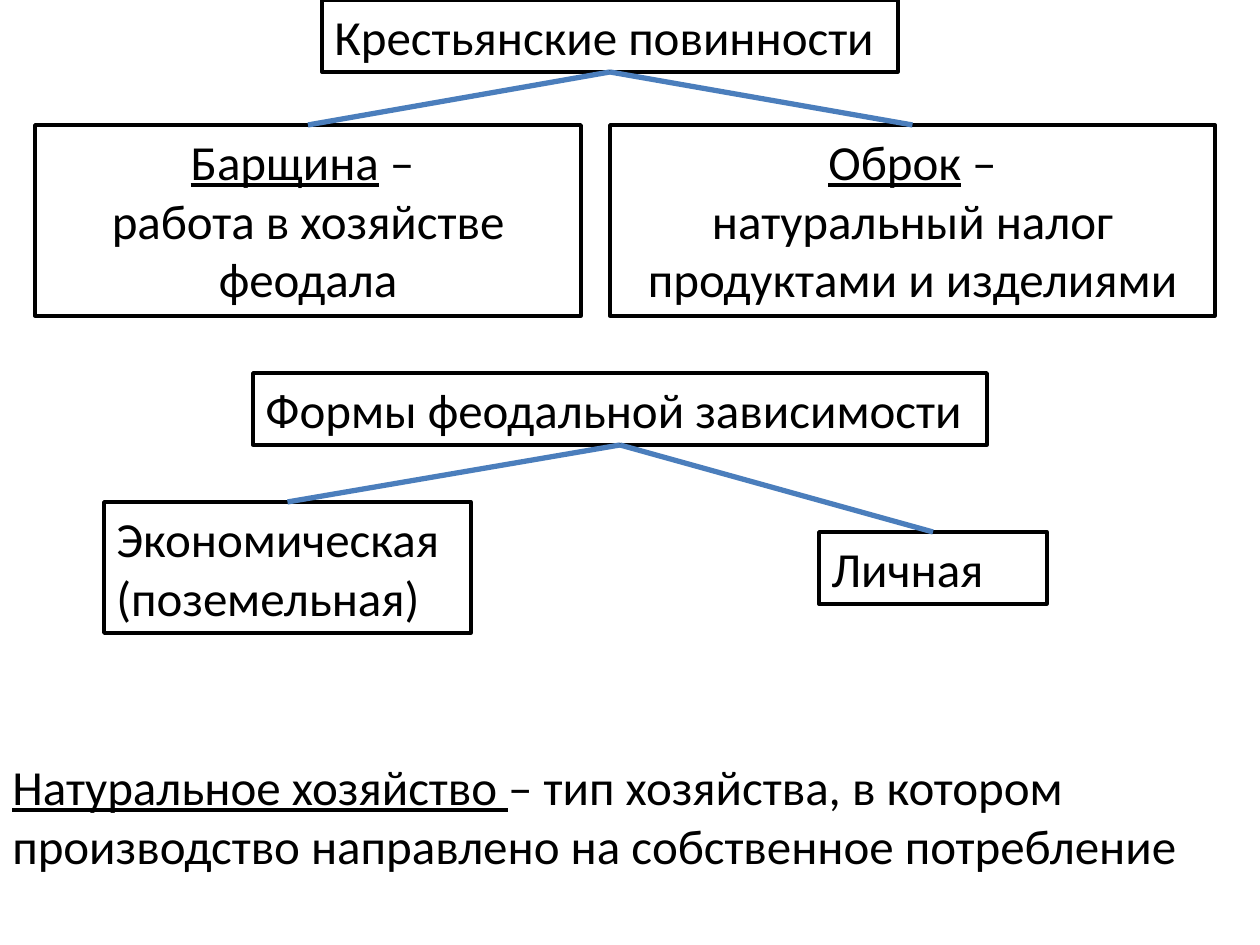
from lxml.etree import SubElement
from pptx import Presentation
from pptx.dml.color import RGBColor
from pptx.enum.shapes import MSO_CONNECTOR, MSO_SHAPE
from pptx.enum.text import MSO_ANCHOR, PP_ALIGN
from pptx.oxml.ns import qn
from pptx.util import Inches, Pt

BLACK = RGBColor(0x00, 0x00, 0x00)
WHITE = RGBColor(0xFF, 0xFF, 0xFF)
BLUE = RGBColor(0x4B, 0x7E, 0xBC)
LEFT, CENTER = PP_ALIGN.LEFT, PP_ALIGN.CENTER
TOP_SITE, BOTTOM_SITE = 0, 2

# Box: (left, top, width, height) in px, alignment, paragraphs of (text, underlined) runs
TREES = [
    {
        "root": ((322, 0, 576, 72), LEFT, [[("Крестьянские повинности", False)]]),
        "branches": [
            ((35, 125, 546, 191), CENTER,
             [[("Барщина", True), (" – ", False)],
              [("работа в хозяйстве феодала", False)]]),
            ((610, 125, 605, 191), CENTER,
             [[("Оброк", True), (" –", False)],
              [("натуральный налог продуктами и изделиями", False)]]),
        ],
    },
    {
        "root": ((253, 373, 734, 72), LEFT, [[("Формы феодальной зависимости", False)]]),
        "branches": [
            ((104, 502, 367, 131), LEFT, [[("Экономическая (поземельная)", False)]]),
            ((819, 532, 228, 72), LEFT, [[("Личная", False)]]),
        ],
    },
]
DEFINITION = ((0, 750, 1260, 131), LEFT, [[
    ("Натуральное хозяйство ", True),
    ("– тип хозяйства, в котором производство направлено на собственное потребление", False),
]])


def px(value):
    return round(value * Inches(1) / 126)


def write(shape, align, paragraphs):
    frame = shape.text_frame
    frame.word_wrap = True
    frame.vertical_anchor = MSO_ANCHOR.TOP
    for index, runs in enumerate(paragraphs):
        paragraph = frame.add_paragraph() if index else frame.paragraphs[0]
        paragraph.alignment = align
        paragraph.font.name = "Calibri"
        paragraph.font.size = Pt(28)
        paragraph.font.color.rgb = BLACK
        for text, underlined in runs:
            run = paragraph.add_run()
            run.text = text
            if underlined:
                run.font.underline = True


def add_box(slide, place, align, paragraphs):
    box = slide.shapes.add_shape(MSO_SHAPE.RECTANGLE, *map(px, place))
    box.shadow.inherit = False
    box.fill.solid()
    box.fill.fore_color.rgb = WHITE
    box.line.color.rgb = BLACK
    box.line.width = Pt(2)
    write(box, align, paragraphs)
    return box


def add_branch_line(slide, root, branch):
    line = slide.shapes.add_connector(MSO_CONNECTOR.STRAIGHT, 0, 0, 0, 0)
    line.begin_connect(root, BOTTOM_SITE)
    line.end_connect(branch, TOP_SITE)
    line.line.color.rgb = BLUE
    line.line.width = Pt(3)
    SubElement(line._element.spPr, qn("a:effectLst"))


def main():
    deck = Presentation()
    deck.slide_width, deck.slide_height = Inches(10), Inches(7.5)
    slide = deck.slides.add_slide(deck.slide_layouts[6])
    for tree in TREES:
        root = add_box(slide, *tree["root"])
        branches = [add_box(slide, *branch) for branch in tree["branches"]]
        for branch in branches:
            add_branch_line(slide, root, branch)
    place, align, paragraphs = DEFINITION
    write(slide.shapes.add_textbox(*map(px, place)), align, paragraphs)
    deck.save("out.pptx")


if __name__ == "__main__":
    main()
